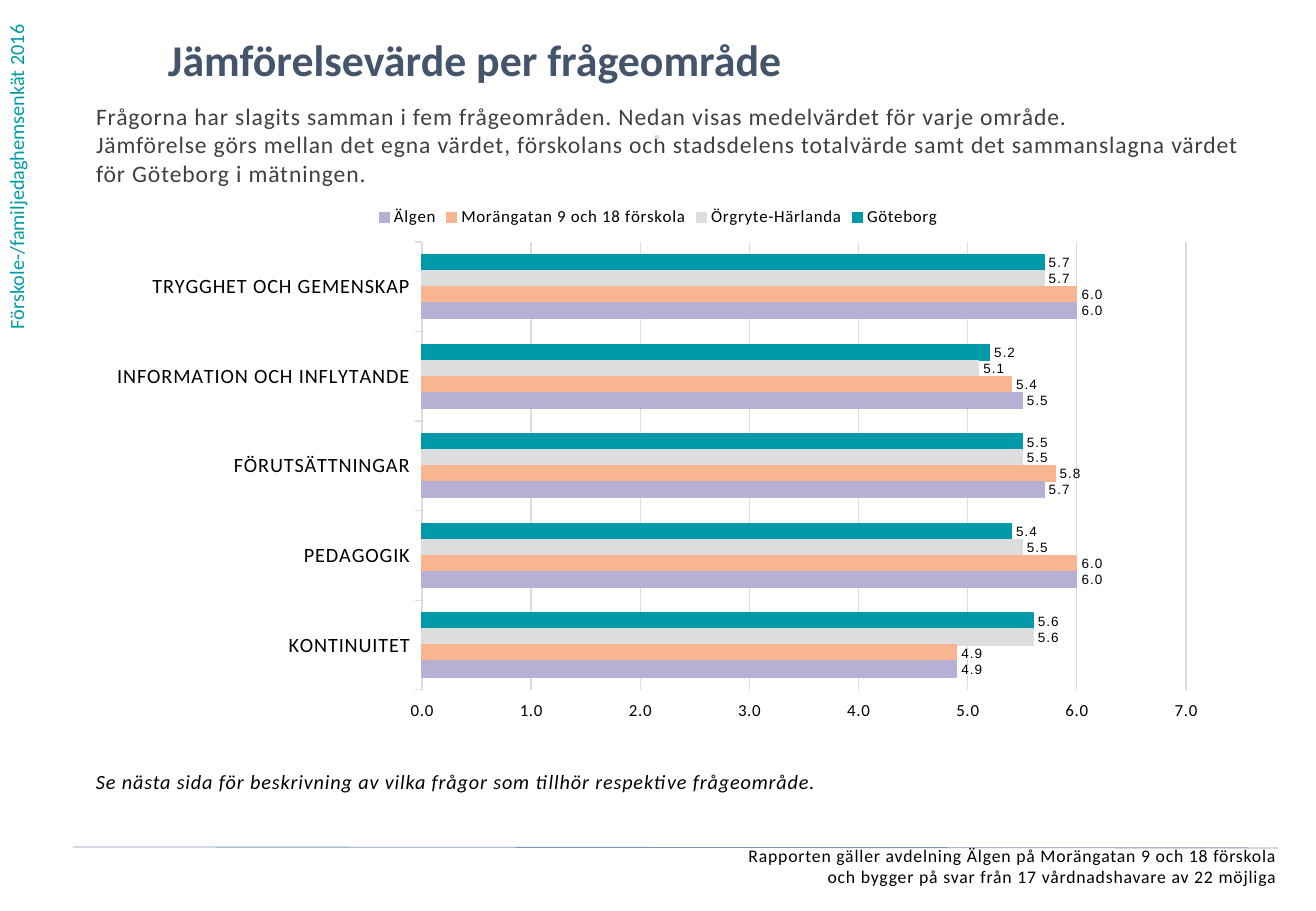
"""Builds the slide comparing survey averages per question area."""
import lxml.etree
import pptx
import pptx.chart.data
import pptx.dml.color
import pptx.enum.chart
import pptx.enum.shapes
import pptx.enum.text
import pptx.oxml
import pptx.oxml.ns
import pptx.util

COLORS = {
    "teal": "0099AA", "grey": "DDDDDD", "peach": "F9B590", "lilac": "B6B1D4",
    "side": "009BA4", "title": "44546A", "intro": "404040", "black": "000000",
    "dot": "D2D9E2", "rule": "8497B0",
}
SIDE_LABEL = ["Förskole-/familjedaghemsenkät 2016"]
TITLE = ["Jämförelsevärde per frågeområde"]
INTRO = [
    "Frågorna har slagits samman i fem frågeområden. Nedan visas medelvärdet för varje område.",
    "Jämförelse görs mellan det egna värdet, förskolans och stadsdelens totalvärde "
    "samt det sammanslagna värdet för Göteborg i mätningen.",
]
DOT = ["⋅"]
NOTE = ["Se nästa sida för beskrivning av vilka frågor som tillhör respektive frågeområde."]
FOOTER = [
    "Rapporten gäller avdelning Älgen på Morängatan 9 och 18 förskola",
    "och bygger på svar från 17 vårdnadshavare av 22 möjliga",
]
AREAS = ["TRYGGHET OCH GEMENSKAP", "INFORMATION OCH INFLYTANDE", "FÖRUTSÄTTNINGAR",
         "PEDAGOGIK", "KONTINUITET"]
SERIES = [
    ("Göteborg", "teal", (5.7, 5.2, 5.5, 5.4, 5.6)),
    ("Örgryte-Härlanda", "grey", (5.7, 5.1, 5.5, 5.5, 5.6)),
    ("Morängatan 9 och 18 förskola", "peach", (6.0, 5.4, 5.8, 6.0, 4.9)),
    ("Älgen", "lilac", (6.0, 5.5, 5.7, 6.0, 4.9)),
]
CHART_BOX = (96, 194, 1124, 538)
PLOT_BOX = (422, 242, 764, 448)
SCALE = 914400 / 121.5
NUMBER_FORMAT = "0.0;0.0"
ALIGN = pptx.enum.text.PP_ALIGN


def px(length):
    return pptx.util.Emu(round(length * SCALE))


def color(name):
    return pptx.dml.color.RGBColor.from_string(COLORS[name])


def style_font(font, size, name="black", face="Calibri", spacing=50):
    font.size = pptx.util.Pt(size)
    font.name = face
    font.color.rgb = color(name)
    font._rPr.set("spc", str(spacing))


def fill_text(box, place, lines, size, name, align=ALIGN.LEFT, bold=False,
              italic=False, spacing=50, side_inset=0, end_inset=0):
    box.left, box.top, box.width, box.height = map(px, place)
    frame = box.text_frame
    frame.word_wrap = True
    frame.auto_size = pptx.enum.text.MSO_AUTO_SIZE.NONE
    frame.vertical_anchor = pptx.enum.text.MSO_ANCHOR.TOP
    frame.margin_left = frame.margin_right = px(side_inset)
    frame.margin_top = frame.margin_bottom = px(end_inset)
    for index, line in enumerate(lines):
        para = frame.add_paragraph() if index else frame.paragraphs[0]
        para.alignment = align
        para.space_before = pptx.util.Pt(0)
        if box.is_placeholder:
            props = para._p.get_or_add_pPr()
            props.set("marL", "0")
            props.set("indent", "0")
            lxml.etree.SubElement(props, pptx.oxml.ns.qn("a:buNone"))
        span = para.add_run()
        span.text = line
        style_font(span.font, size, name, spacing=spacing)
        span.font.bold = bold
        span.font.italic = italic


def add_text(page, place, *args, **kwargs):
    box = page.shapes.add_textbox(0, 0, 0, 0)
    fill_text(box, place, *args, **kwargs)
    return box


def place_plot(chart):
    left, top, width, height = CHART_BOX
    plot_left, plot_top, plot_width, plot_height = PLOT_BOX
    shares = {"x": (plot_left - left) / width, "y": (plot_top - top) / height,
              "w": plot_width / width, "h": plot_height / height}
    area = chart._chartSpace.chart.plotArea
    for old in area.findall(pptx.oxml.ns.qn("c:layout")):
        area.remove(old)
    modes = "".join(f'<c:{axis}Mode val="edge"/>' for axis in "xy")
    sizes = "".join(f'<c:{key} val="{share:.4f}"/>' for key, share in shares.items())
    area.insert(0, pptx.oxml.parse_xml(
        f'<c:layout {pptx.oxml.ns.nsdecls("c")}><c:manualLayout>'
        f'<c:layoutTarget val="inner"/>{modes}{sizes}</c:manualLayout></c:layout>'))


def add_area_chart(page):
    data = pptx.chart.data.CategoryChartData(number_format=NUMBER_FORMAT)
    data.categories = AREAS
    for label, _, values in SERIES:
        data.add_series(label, values)
    kinds = pptx.enum.chart
    chart = page.shapes.add_chart(
        kinds.XL_CHART_TYPE.BAR_CLUSTERED, *map(px, CHART_BOX), data).chart
    chart.has_title = False
    style_font(chart.font, 10)
    chart.has_legend = True
    chart.legend.position = kinds.XL_LEGEND_POSITION.TOP
    chart.legend.include_in_layout = False
    style_font(chart.legend.font, 10)

    plot = chart.plots[0]
    plot.gap_width = 162
    plot.overlap = 0
    plot.vary_by_categories = False
    for series, (_, name, _) in zip(plot.series, SERIES):
        series.format.fill.solid()
        series.format.fill.fore_color.rgb = color(name)
        series.format.line.color.rgb = color(name)
        series.format.line.width = pptx.util.Pt(0.75)
        labels = series.data_labels
        labels.show_value = True
        labels.number_format = NUMBER_FORMAT
        labels.number_format_is_linked = False
        labels.position = kinds.XL_LABEL_POSITION.OUTSIDE_END
        style_font(labels.font, 8, face="Arial")

    areas, scores = chart.category_axis, chart.value_axis
    areas.reverse_order = True
    areas.major_tick_mark = kinds.XL_TICK_MARK.OUTSIDE
    style_font(areas.tick_labels.font, 12)
    scores.minimum_scale, scores.maximum_scale, scores.major_unit = 0, 7, 1
    scores.major_tick_mark = kinds.XL_TICK_MARK.OUTSIDE
    scores.tick_label_position = kinds.XL_TICK_LABEL_POSITION.HIGH
    scores.format.line.fill.background()
    scores.tick_labels.number_format = NUMBER_FORMAT
    scores.tick_labels.number_format_is_linked = False
    style_font(scores.tick_labels.font, 10)
    scores.has_major_gridlines = True
    for line in (areas.format.line, scores.major_gridlines.format.line):
        line.color.rgb = color("grey")
        line.width = pptx.util.Pt(0.75)
    place_plot(chart)


def add_rule(page):
    rule = page.shapes.add_connector(
        pptx.enum.shapes.MSO_CONNECTOR.STRAIGHT, *map(px, (73, 847, 1278, 848)))
    rule.line.color.rgb = color("rule")
    rule.line.width = pptx.util.Pt(0.5)
    lxml.etree.SubElement(rule._element.spPr, pptx.oxml.ns.qn("a:effectLst"))


def main():
    deck = pptx.Presentation()
    deck.slide_width, deck.slide_height = px(1316), px(911)
    page = deck.slides.add_slide(deck.slide_layouts[1])
    title, body = page.placeholders
    side = add_text(page, (-2, 0, 49, 341), SIDE_LABEL, 12, "side", spacing=0,
                    side_inset=6, end_inset=12)
    side.text_frame._txBody.bodyPr.set("vert", "vert270")
    fill_text(title, (168, 33, 1014, 69), TITLE, 26, "title", bold=True, spacing=0)
    fill_text(body, (96, 102, 1149, 92), INTRO, 14, "intro")
    add_text(page, (470, 124, 374, 47), DOT, 12, "dot", align=ALIGN.CENTER, bold=True)
    add_area_chart(page)
    add_text(page, (96, 769, 1124, 30), NOTE, 12, "black", italic=True)
    add_rule(page)
    add_text(page, (15, 845, 1262, 46), FOOTER, 10.5, "black", align=ALIGN.RIGHT)
    deck.save("out.pptx")


if __name__ == "__main__":
    main()
